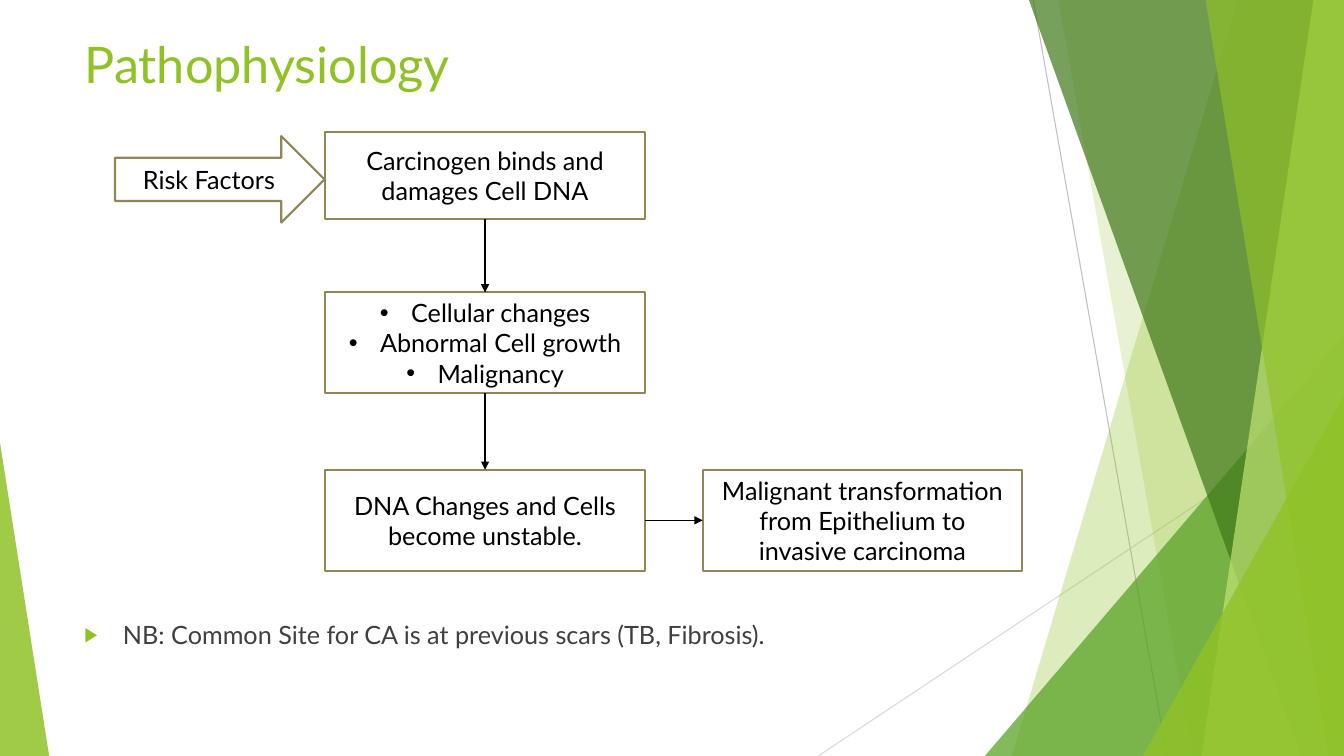
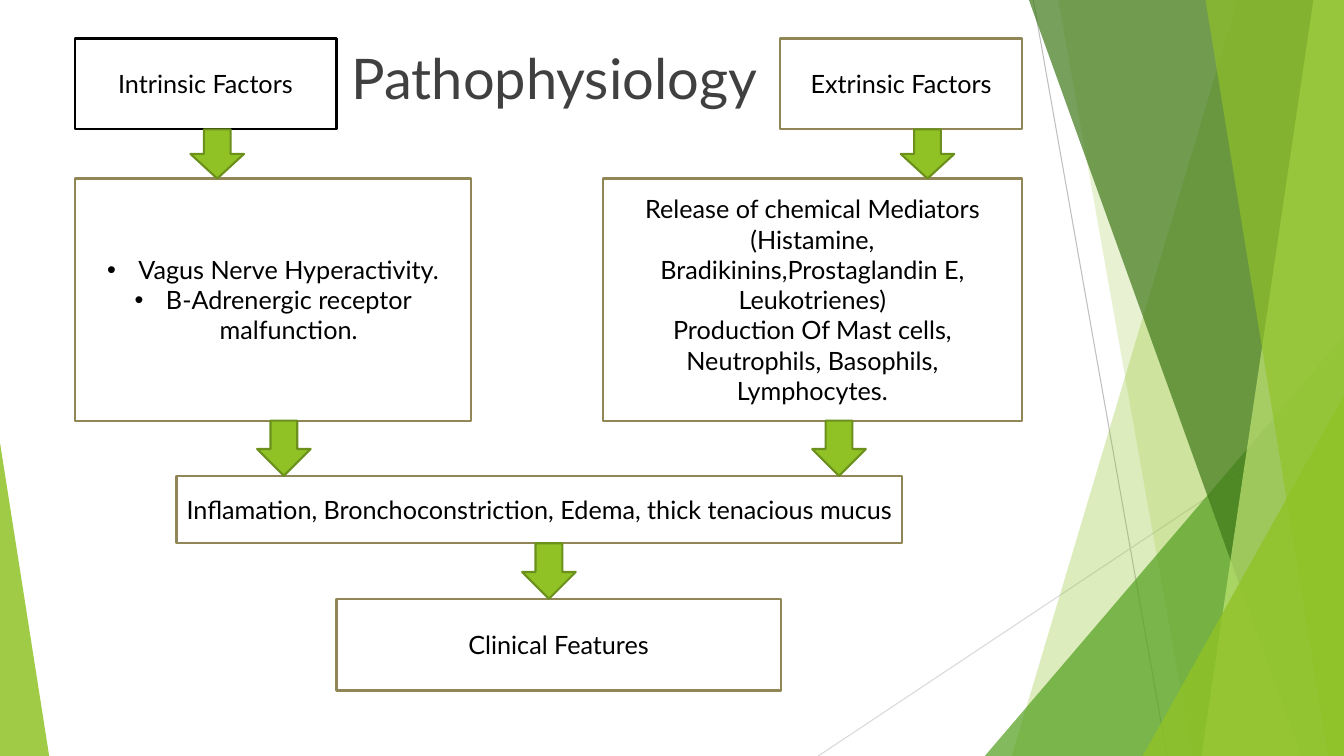
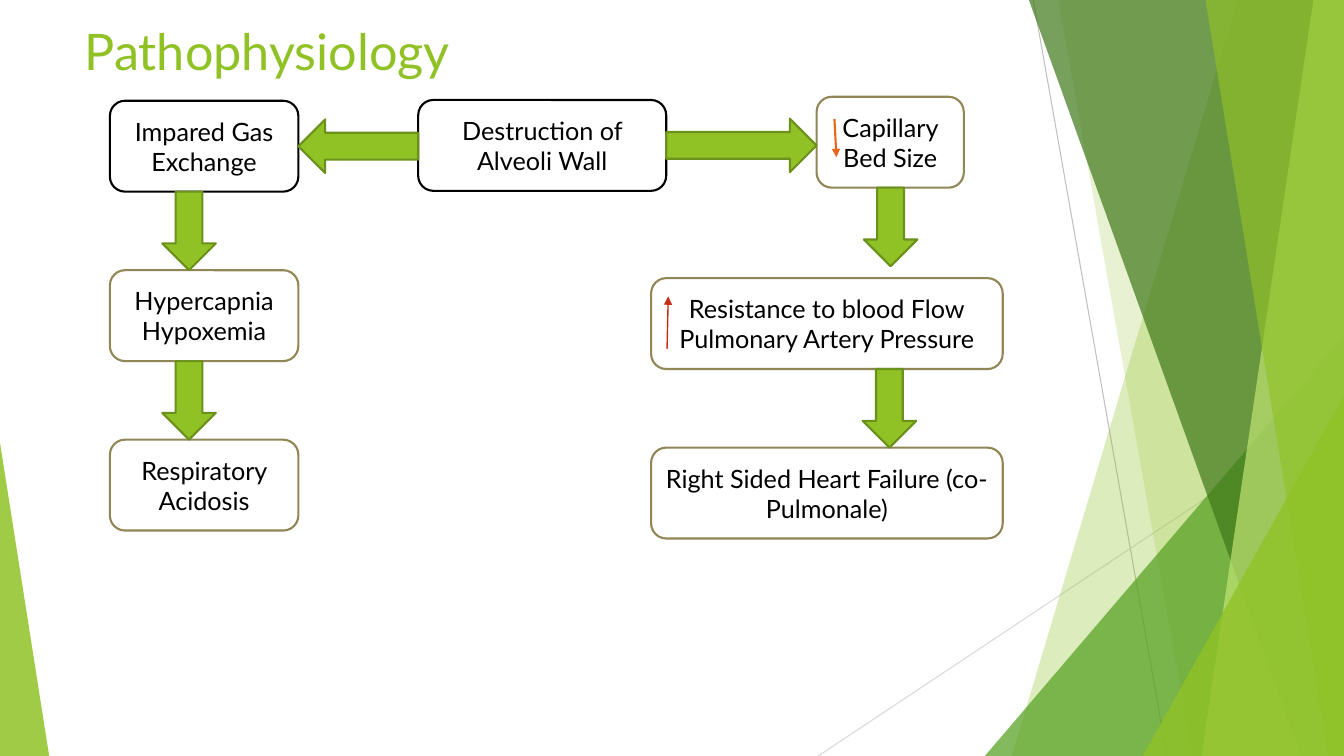
import dataclasses

import lxml.etree
import pptx
import pptx.dml.color
import pptx.enum.shapes
import pptx.enum.text
import pptx.oxml.ns
import pptx.util

Cm = pptx.util.Cm
Pt = pptx.util.Pt
RGBColor = pptx.dml.color.RGBColor
SHAPE = pptx.enum.shapes.MSO_SHAPE
ALIGN = pptx.enum.text.PP_ALIGN
ANCHOR = pptx.enum.text.MSO_ANCHOR
qn = pptx.oxml.ns.qn

FONT = "Lato"
LIME = RGBColor(0x90, 0xC2, 0x26)
LEAF = RGBColor(0x54, 0xA0, 0x21)
FOREST = RGBColor(0x3F, 0x78, 0x19)
PALE_LIME = RGBColor(0xC0, 0xE4, 0x74)
MOSS = RGBColor(0x6B, 0x90, 0x1C)
KHAKI = RGBColor(0x91, 0x86, 0x55)
BLACK = RGBColor(0x00, 0x00, 0x00)
WHITE = RGBColor(0xFF, 0xFF, 0xFF)
CHARCOAL = RGBColor(0x40, 0x40, 0x40)
SILVER = RGBColor(0xBF, 0xBF, 0xBF)
MIST = RGBColor(0xD9, 0xD9, 0xD9)
ORANGE = RGBColor(0xE7, 0x66, 0x18)
RED = RGBColor(0xC4, 0x2F, 0x1A)

ARROW_BREADTH = 1.35


@dataclasses.dataclass
class Box:
    """A rectangle in centimetres."""

    left: float
    top: float
    width: float
    height: float

    @property
    def right(self):
        """Give the right edge."""
        return self.left + self.width

    @property
    def bottom(self):
        """Give the lower edge."""
        return self.top + self.height

    def inner(self, x, y, width, height):
        """Give a box offset from the top left corner of this one."""
        return Box(self.left + x, self.top + y, width, height)

    def lengths(self):
        """Give the four measures for python-pptx."""
        return [Cm(value) for value in dataclasses.astuple(self)]


PAGE = Box(0, 0, 33.87, 19.05)


def add_xml(parent, tag, **attributes):
    """Append a child element."""
    return lxml.etree.SubElement(parent, qn(tag), attributes)


def style_font(paragraph, size, colour):
    """Set the font of a whole paragraph."""
    paragraph.font.name = FONT
    paragraph.font.size = Pt(size)
    paragraph.font.color.rgb = colour


def add_bullet(paragraph, symbol, indent, colour=None, percent=100):
    """Give a paragraph a hanging bullet."""
    properties = paragraph._p.get_or_add_pPr()
    properties.set("marL", str(int(Cm(indent))))
    properties.set("indent", str(-int(Cm(indent))))
    if colour is not None:
        add_xml(add_xml(properties, "a:buClr"), "a:srgbClr", val=str(colour))
    add_xml(properties, "a:buSzPct", val=str(percent * 1000))
    add_xml(properties, "a:buFont", typeface="Arial")
    add_xml(properties, "a:buChar", char=symbol)


def add_line(slide, start, end, colour, weight, arrow=True):
    """Draw a straight line between two points in centimetres."""
    line = slide.shapes.add_connector(
        pptx.enum.shapes.MSO_CONNECTOR.STRAIGHT,
        *[Cm(value) for value in (*start, *end)])
    line.line.color.rgb = colour
    line.line.width = Pt(weight)
    properties = line.element.spPr
    if arrow:
        add_xml(properties.find(qn("a:ln")), "a:tailEnd", type="triangle")
    add_xml(properties, "a:effectLst")
    return line


def tint(facet, colour, opacity):
    """Fill a facet with a see-through colour and no outline."""
    facet.shadow.inherit = False
    facet.fill.solid()
    facet.fill.fore_color.rgb = colour
    facet.line.fill.background()
    hue = facet.element.spPr.find(".//" + qn("a:srgbClr"))
    add_xml(hue, "a:alpha", val=str(opacity * 1000))
    return facet


def add_panel(slide, page, top_x, bottom_x, colour, opacity):
    """Draw a slanted panel that reaches the right edge of the page."""
    outline = [(top_x, 0), (page.width, 0),
               (page.width, page.height), (bottom_x, page.height)]
    points = [(Cm(page.left + x), Cm(page.top + y)) for x, y in outline]
    builder = slide.shapes.build_freeform(*points[0])
    builder.add_line_segments(points[1:])
    return tint(builder.convert_to_shape(), colour, opacity)


def add_wedge(slide, page, x, y, width, apex, colour, opacity):
    """Draw a triangle that stands on the lower edge of the page."""
    wedge = slide.shapes.add_shape(
        SHAPE.ISOSCELES_TRIANGLE,
        *page.inner(x, y, width, page.height - y).lengths())
    wedge.adjustments[0] = apex
    return tint(wedge, colour, opacity)


def add_backdrop(slide, page):
    """Draw the green facets and move them to the layout of the slide."""
    facets = [
        add_line(slide, (page.left + 26.04, page.top),
                 (page.left + 29.41, page.bottom), SILVER, 0.75, False),
        add_line(slide, (page.right, page.top + 10.24),
                 (page.left + 20.62, page.bottom), MIST, 0.75, False),
        add_panel(slide, page, 31.19, 25.5, LIME, 30),
        add_panel(slide, page, 26.67, 30.05, LIME, 20),
        add_wedge(slide, page, 24.82, 8.46, 9.05, 1, LEAF, 72),
        add_panel(slide, page, 25.93, 32.79, FOREST, 70),
        add_panel(slide, page, 33.1, 30.28, PALE_LIME, 70),
        add_panel(slide, page, 30.38, 33.48, LIME, 65),
        add_wedge(slide, page, 28.8, 9.98, 5.07, 1, LIME, 80),
        add_wedge(slide, page, 0, 11.15, 1.24, 0, LIME, 85),
    ]
    layout_tree = slide.slide_layout.shapes.element
    for order, facet in enumerate(facets):
        facet.element.xpath(".//p:cNvPr")[0].set("id", str(100 + order))
        layout_tree.insert(2 + order, facet.element)


def set_title(slide, box, size=36, colour=LIME):
    """Place and format the title."""
    title = slide.shapes.title
    title.left, title.top, title.width, title.height = box.lengths()
    frame = title.text_frame
    frame.text = "Pathophysiology"
    frame.word_wrap = True
    frame.auto_size = pptx.enum.text.MSO_AUTO_SIZE.NONE
    frame.vertical_anchor = ANCHOR.TOP
    frame.paragraphs[0].alignment = ALIGN.LEFT
    style_font(frame.paragraphs[0], size, colour)


def add_solid(slide, kind, box, fill, edge):
    """Draw an opaque outlined shape."""
    solid = slide.shapes.add_shape(kind, *box.lengths())
    solid.shadow.inherit = False
    solid.fill.solid()
    solid.fill.fore_color.rgb = fill
    solid.line.color.rgb = edge
    solid.line.width = Pt(1.5)
    return solid


def add_step(slide, kind, box, *lines, edge=KHAKI, bulleted=False):
    """Draw a white step of the flow with centred text."""
    step = add_solid(slide, kind, box, WHITE, edge)
    frame = step.text_frame
    frame.word_wrap = True
    frame.vertical_anchor = ANCHOR.MIDDLE
    frame.text = "\n".join(lines)
    for paragraph in frame.paragraphs:
        paragraph.alignment = ALIGN.CENTER
        if bulleted:
            add_bullet(paragraph, "•", 0.79)
        style_font(paragraph, 18, BLACK)
    return step


def add_down_arrow(slide, upper, x, length):
    """Draw a green arrow down from a box, x from its left edge."""
    add_solid(slide, SHAPE.DOWN_ARROW,
              upper.inner(x, upper.height, ARROW_BREADTH, length), LIME, MOSS)


def add_side_arrow(slide, kind, left_box, right_box):
    """Fill the gap between two neighbours with a green arrow."""
    gap = left_box.inner(left_box.width, (left_box.height - ARROW_BREADTH) / 2,
                         right_box.left - left_box.right, ARROW_BREADTH)
    add_solid(slide, kind, gap, LIME, MOSS)


def link(slide, source, source_site, target, target_site):
    """Glue a thin black arrow to two steps."""
    arrow = add_line(slide, (0, 0), (1, 1), BLACK, 1)
    arrow.begin_connect(source, source_site)
    arrow.end_connect(target, target_site)


def build_carcinoma(slide, box):
    """Show how risk factors lead to invasive carcinoma."""
    set_title(slide, box.inner(0, 0, box.width, 2.51))
    flow = box.inner(0, 2.62, box.width, 11.05)
    step_x, step_width, step_height = 6.32, 8.05, 2.54
    last_y = flow.height - step_height
    add_step(slide, SHAPE.RIGHT_ARROW, flow.inner(1.02, 0.1, 5.28, 2.18),
             "Risk Factors")
    damage = add_step(slide, SHAPE.RECTANGLE,
                      flow.inner(step_x, 0, step_width, 2.18),
                      "Carcinogen binds and damages Cell DNA")
    changes = add_step(slide, SHAPE.RECTANGLE,
                       flow.inner(step_x, 4.04, step_width, step_height),
                       "Cellular changes", "Abnormal Cell growth",
                       "Malignancy", bulleted=True)
    unstable = add_step(slide, SHAPE.RECTANGLE,
                        flow.inner(step_x, last_y, step_width, step_height),
                        "DNA Changes and Cells become unstable.")
    malignant = add_step(
        slide, SHAPE.RECTANGLE,
        flow.inner(flow.width - step_width, last_y, step_width, step_height),
        "Malignant transformation from Epithelium to invasive carcinoma")
    link(slide, damage, 2, changes, 0)
    link(slide, changes, 2, unstable, 0)
    link(slide, unstable, 3, malignant, 1)

    note = slide.shapes.add_textbox(
        *box.inner(0, 14.78, box.width, 1.2).lengths())
    note.text_frame.word_wrap = True
    remark = note.text_frame.paragraphs[0]
    remark.text = "NB: Common Site for CA is at previous scars (TB, Fibrosis)."
    add_bullet(remark, "▶", 0.97, LIME, 80)
    style_font(remark, 18, CHARCOAL)


def build_asthma(slide, box):
    """Show how intrinsic and extrinsic factors meet."""
    set_title(slide, box.inner(6.73, 0, 11.05, 2.29), 40, CHARCOAL)
    kind = SHAPE.FLOWCHART_PROCESS
    intrinsic = box.inner(0, 0, 6.6, 2.29)
    extrinsic = box.inner(box.width - 6.1, 0, 6.1, 2.29)
    nerve = box.inner(0, 3.53, 10, 6.1)
    mediators = box.inner(box.width - 10.57, 3.53, 10.57, 6.1)
    inflammation = box.inner(2.57, 11.02, 18.29, 1.7)
    features = box.inner(6.6, 14.12, 11.2, 2.31)
    add_step(slide, kind, intrinsic, "Intrinsic Factors", edge=BLACK)
    add_step(slide, kind, extrinsic, "Extrinsic Factors")
    add_step(slide, kind, mediators,
             "Release of chemical Mediators (Histamine, "
             "Bradikinins,Prostaglandin E, Leukotrienes)",
             "Production Of Mast cells, Neutrophils, Basophils, Lymphocytes.")
    add_step(slide, kind, nerve, "Vagus Nerve Hyperactivity.",
             "B-Adrenergic receptor malfunction.", bulleted=True)
    add_step(slide, kind, inflammation,
             "Inflamation, Bronchoconstriction, Edema, thick tenacious mucus")
    add_step(slide, kind, features, "Clinical Features")
    for upper, lower, x in [(intrinsic, nerve, 2.92),
                            (extrinsic, mediators, 3.04),
                            (nerve, inflammation, 4.6),
                            (mediators, inflammation, 5.28),
                            (inflammation, features, 8.71)]:
        add_down_arrow(slide, upper, x, lower.top - upper.bottom)


def build_alveoli(slide, box):
    """Show what follows from the destruction of the alveoli wall."""
    set_title(slide, box.inner(0, 0, box.width, 2.08))
    flow = box.inner(0.89, 2.06, 22.5, 11.1)
    kind = SHAPE.FLOWCHART_ALTERNATE_PROCESS
    height, arrow_length = 2.29, 1.98
    pitch = height + arrow_length
    gas, blood_gases, acidosis = [
        flow.inner(0, 0.1 + row * pitch, 4.75, height) for row in range(3)]
    wall = flow.inner(7.77, 0.08, 6.25, height)
    capillary = flow.inner(17.81, 0, 3.71, height)
    resistance, heart = [
        flow.inner(flow.width - 8.86, 4.57 + row * pitch, 8.86, height)
        for row in range(2)]
    add_step(slide, kind, gas, "Impared Gas Exchange", edge=BLACK)
    add_step(slide, kind, acidosis, "Respiratory Acidosis")
    add_step(slide, kind, blood_gases, "Hypercapnia", "Hypoxemia")
    add_step(slide, kind, capillary, "Capillary Bed Size")
    add_step(slide, kind, wall, "Destruction of Alveoli Wall", edge=BLACK)
    add_step(slide, kind, resistance, "Resistance to blood Flow",
             "Pulmonary Artery Pressure")
    add_step(slide, kind, heart, "Right Sided Heart Failure (co-Pulmonale)")
    add_line(slide, (capillary.left + 0.45, capillary.top + 0.56),
             (capillary.left + 0.5, capillary.top + 1.52), ORANGE, 1.5)
    add_line(slide, (resistance.left + 0.4, resistance.top + 1.78),
             (resistance.left + 0.43, resistance.top + 0.46), RED, 1)
    add_side_arrow(slide, SHAPE.RIGHT_ARROW, wall, capillary)
    add_side_arrow(slide, SHAPE.LEFT_ARROW, gas, wall)
    for upper, x in [(gas, 1.32), (blood_gases, 1.32),
                     (capillary, 1.19), (resistance, 5.33)]:
        add_down_arrow(slide, upper, x, arrow_length)


def main():
    """Build and save the deck."""
    deck = pptx.Presentation()
    deck.slide_width, deck.slide_height = Cm(PAGE.width), Cm(PAGE.height)
    title_only = deck.slide_layouts[5]
    contents = [(build_carcinoma, 0.71), (build_asthma, 0.97),
                (build_alveoli, 0.38)]
    for number, (build, top) in enumerate(contents):
        slide = deck.slides.add_slide(title_only)
        if number == 0:
            add_backdrop(slide, PAGE)
        build(slide, PAGE.inner(1.88, top, 23.88, 16.43))
    deck.save("out.pptx")


if __name__ == "__main__":
    main()
